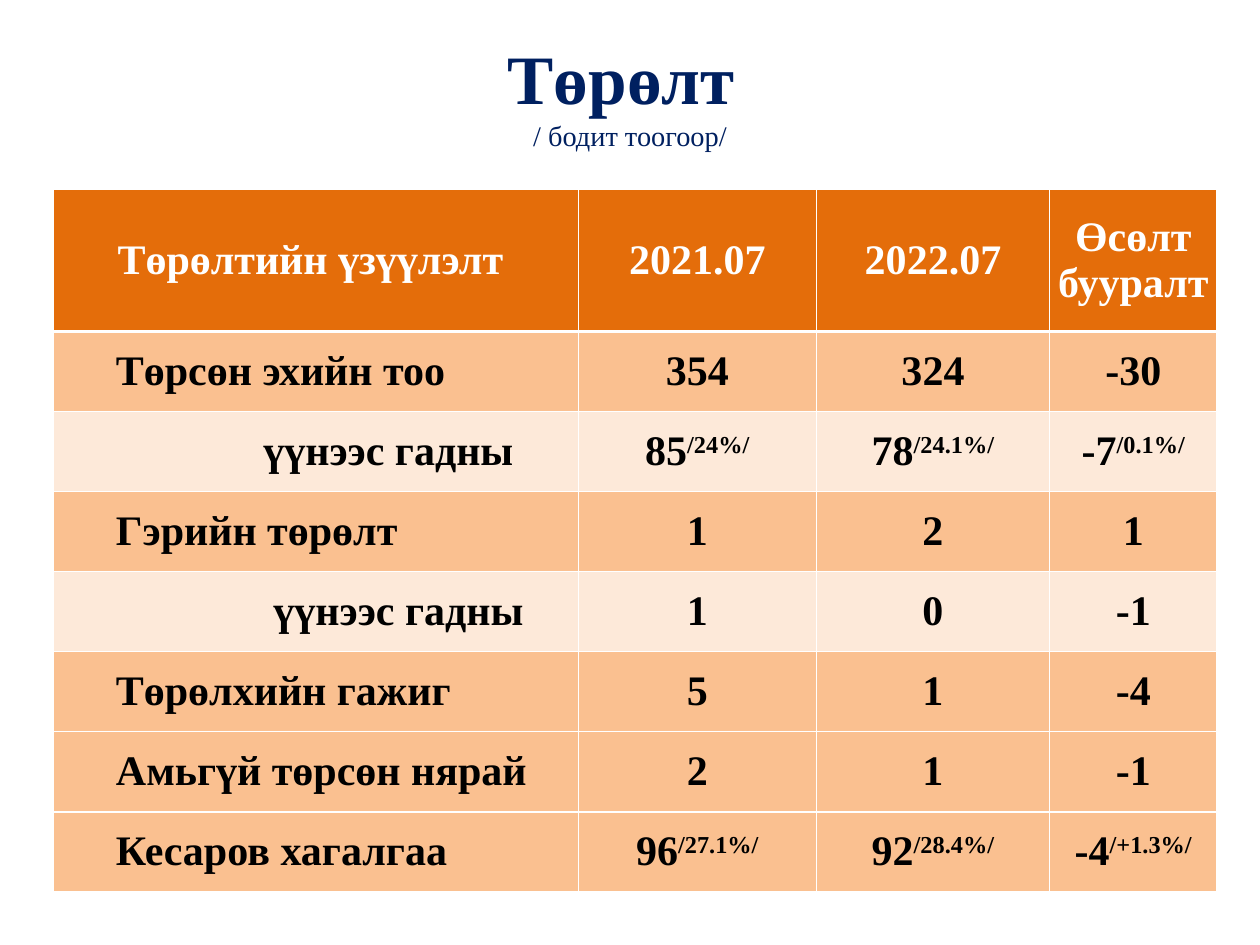
import lxml.etree
import pptx
import pptx.dml.color
import pptx.enum.text
import pptx.oxml.ns
import pptx.util

Inches = pptx.util.Inches
CENTER = pptx.enum.text.PP_ALIGN.CENTER
MIDDLE = pptx.enum.text.MSO_ANCHOR.MIDDLE
qn = pptx.oxml.ns.qn

HEADER_FILL, MAIN_FILL, DETAIL_FILL = "E46D0A", "FAC090", "FDE9D9"
HEADINGS = ["Төрөлтийн үзүүлэлт ", "2021.07", "2022.07", "Өсөлт бууралт"]
# Left indent of the label in inches, then the row; a part in slashes is superscript
ROWS = [
    (0.5, ["Төрсөн эхийн тоо", "354", "324", "-30"]),
    (1.67, ["үүнээс гадны", "85/24%/", "78/24.1%/", "-7/0.1%/"]),
    (0.5, ["Гэрийн төрөлт", "1", "2", "1"]),
    (1.75, ["үүнээс гадны", "1", "0", "-1"]),
    (0.5, ["Төрөлхийн гажиг", "5", "1", "-4"]),
    (0.5, ["Амьгүй төрсөн нярай", "2", "1", "-1"]),
    (0.5, ["Кесаров хагалгаа", "96/27.1%/", "92/28.4%/", "-4/+1.3%/"]),
]
COLUMN_WIDTHS = [4.17, 1.89, 1.85, 1.33]
TABLE_HEIGHT, HEADER_HEIGHT = 5.58, 1.13


def add_run(paragraph, text, size, color, bold=True):
    run = paragraph.add_run()
    run.text = text
    run.font.name = "Times New Roman"
    run.font.size = pptx.util.Pt(size)
    run.font.bold = bold
    run.font.color.rgb = pptx.dml.color.RGBColor.from_string(color)
    return run


def style_cell(cell, fill, row):
    """Set margins, white borders (thicker under the header) and fill."""
    cell.margin_left = cell.margin_right = cell.margin_top = cell.margin_bottom = 0
    cell.vertical_anchor = MIDDLE
    properties = cell._tc.get_or_add_tcPr()
    for side in ("L", "R", "T", "B"):
        thick = (row, side) in ((0, "B"), (1, "T"))
        line = lxml.etree.SubElement(properties, qn(f"a:ln{side}"))
        line.set("w", str(pptx.util.Pt(1.5 if thick else 1)))
        solid = lxml.etree.SubElement(line, qn("a:solidFill"))
        lxml.etree.SubElement(solid, qn("a:srgbClr")).set("val", "FFFFFF")
    cell.fill.solid()
    cell.fill.fore_color.rgb = pptx.dml.color.RGBColor.from_string(fill)


presentation = pptx.Presentation()
presentation.slide_width, presentation.slide_height = Inches(10), Inches(7.5)
slide = presentation.slides.add_slide(presentation.slide_layouts[5])

# Title
title = slide.shapes.title
title.left, title.top = Inches(0.5), Inches(0.33)
title.width, title.height = Inches(9), Inches(0.83)
title.text_frame.auto_size = pptx.enum.text.MSO_AUTO_SIZE.NONE
title.text_frame.vertical_anchor = MIDDLE
paragraph = title.text_frame.paragraphs[0]
paragraph.alignment = CENTER
add_run(paragraph, "Төрөлт ", 39.6, "002060")
paragraph.add_line_break()
add_run(paragraph, "/ бодит тоогоор/", 16.2, "002060", bold=False)

# Table
table = slide.shapes.add_table(
    len(ROWS) + 1, len(HEADINGS), Inches(0.42), Inches(1.5),
    Inches(sum(COLUMN_WIDTHS)), Inches(TABLE_HEIGHT)).table
for column, width in zip(table.columns, COLUMN_WIDTHS):
    column.width = Inches(width)
for row in table.rows:
    row.height = Inches((TABLE_HEIGHT - HEADER_HEIGHT) / len(ROWS))
table.rows[0].height = Inches(HEADER_HEIGHT)

for column_index, heading in enumerate(HEADINGS):
    cell = table.cell(0, column_index)
    style_cell(cell, HEADER_FILL, 0)
    paragraph = cell.text_frame.paragraphs[0]
    paragraph.alignment = CENTER
    add_run(paragraph, heading, 24, "FFFFFF")

for row_index, (indent, values) in enumerate(ROWS, start=1):
    fill = DETAIL_FILL if indent > 1 else MAIN_FILL
    for column_index, value in enumerate(values):
        cell = table.cell(row_index, column_index)
        style_cell(cell, fill, row_index)
        paragraph = cell.text_frame.paragraphs[0]
        if column_index == 0:
            paragraph.level = 1
            paragraph_properties = paragraph._p.get_or_add_pPr()
            paragraph_properties.set("marL", str(Inches(indent)))
            paragraph_properties.set("indent", "0")
        else:
            paragraph.alignment = CENTER
        number, slash, share = value.partition("/")
        add_run(paragraph, number, 24, "000000")
        if share:
            run = add_run(paragraph, slash + share, 24, "000000")
            run._r.get_or_add_rPr().set("baseline", "30000")

presentation.save("out.pptx")
